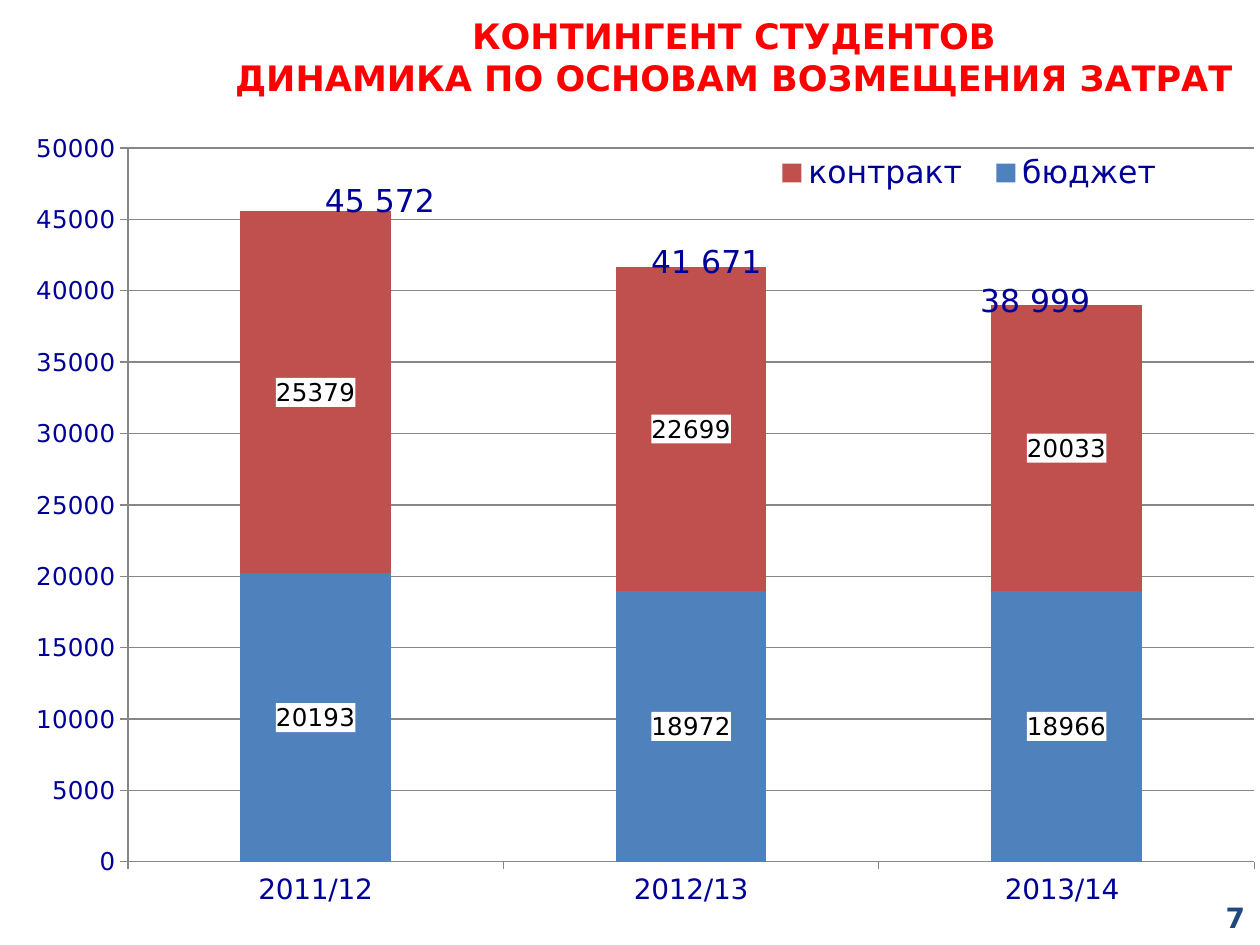
import pptx
import pptx.chart.data
import pptx.dml.color
import pptx.enum.chart
import pptx.enum.text
import pptx.oxml
import pptx.oxml.ns
import pptx.util

Inches, Pt = pptx.util.Inches, pptx.util.Pt
PP_ALIGN = pptx.enum.text.PP_ALIGN
ANCHOR = pptx.enum.text.MSO_ANCHOR
CHART = pptx.enum.chart

TITLE = "КОНТИНГЕНТ СТУДЕНТОВ\vДИНАМИКА ПО ОСНОВАМ ВОЗМЕЩЕНИЯ ЗАТРАТ"
PAGE = "7"
YEARS = ["2011/12", "2012/13", "2013/14 "]
SERIES = [
    ("бюджет", [20193, 18972, 18966], "4F81BD"),
    ("контракт", [25379, 22699, 20033], "C0504D"),
]
TOTALS = [
    ("45 572", 2.48, 1.39),
    ("41 671", 5.07, 1.87),
    ("38 999", 7.68, 2.18),
]
THEME = {
    "font": "DejaVu Sans",
    "title": (20, "FF0000", True),
    "page": (16, "1F497D", True),
    "total": (18, "000099", False),
    "legend": (18, "000099", False),
    "category": (16, "000099", False),
    "value": (14, "000099", False),
    "label": (14, "000000", False),
    "grid": "878787",
    "label_fill": "FFFFFF",
}
PLOT = (0.091, 0.029, 0.909, 0.888)
LEGEND = (0.6, 0.03, 0.34, 0.06)


def rgb(color):
    return pptx.dml.color.RGBColor.from_string(color)


def style(font, role):
    size, color, bold = THEME[role]
    font.name = THEME["font"]
    font.size = Pt(size)
    font.bold = bold
    font.color.rgb = rgb(color)


def write(sp, text, role, align, anchor):
    tf = sp.text_frame
    tf.word_wrap = True
    tf.auto_size = pptx.enum.text.MSO_AUTO_SIZE.NONE
    tf.vertical_anchor = anchor
    p = tf.paragraphs[0]
    p.text = text
    p.alignment = align
    style(p.font, role)


def add_text(slide, box, *args):
    write(slide.shapes.add_textbox(*map(Inches, box)), *args)


def layout_xml(box, inner=False):
    target = '<c:layoutTarget val="inner"/>' if inner else ""
    modes = "".join(f'<c:{k}Mode val="edge"/>' for k in "xy")
    sizes = "".join(f'<c:{k} val="{v}"/>' for k, v in zip("xywh", box))
    return pptx.oxml.parse_xml(
        f'<c:layout {pptx.oxml.ns.nsdecls("c")}><c:manualLayout>'
        f"{target}{modes}{sizes}</c:manualLayout></c:layout>"
    )


def set_layout(parent, box, inner=False):
    for old in parent.findall(pptx.oxml.ns.qn("c:layout")):
        parent.remove(old)
    position = parent.find(pptx.oxml.ns.qn("c:legendPos"))
    index = 0 if position is None else parent.index(position) + 1
    parent.insert(index, layout_xml(box, inner))


def add_labels(series):
    labels = series.data_labels
    labels.show_value = True
    labels.position = CHART.XL_LABEL_POSITION.CENTER
    style(labels.font, "label")
    fill = pptx.oxml.parse_xml(
        f'<c:spPr {pptx.oxml.ns.nsdecls("c", "a")}><a:solidFill>'
        f'<a:srgbClr val="{THEME["label_fill"]}"/></a:solidFill></c:spPr>'
    )
    labels._element.find(pptx.oxml.ns.qn("c:txPr")).addprevious(fill)


def add_chart(slide):
    data = pptx.chart.data.CategoryChartData()
    data.categories = YEARS
    for name, values, _ in SERIES:
        data.add_series(name, values)
    chart = slide.shapes.add_chart(
        CHART.XL_CHART_TYPE.COLUMN_STACKED,
        *map(Inches, (0.12, 0.99, 9.84, 6.38)), data
    ).chart
    chart.has_title = False
    style(chart.font, "label")
    plot = chart.plots[0]
    plot.gap_width, plot.overlap = 150, 100
    plot.vary_by_categories = False
    for series, (_, _, color) in zip(plot.series, SERIES):
        series.format.fill.solid()
        series.format.fill.fore_color.rgb = rgb(color)
        add_labels(series)

    axes = (chart.category_axis, "category"), (chart.value_axis, "value")
    for axis, role in axes:
        style(axis.tick_labels.font, role)
        axis.major_tick_mark = CHART.XL_TICK_MARK.OUTSIDE
        axis.format.line.color.rgb = rgb(THEME["grid"])
    value = chart.value_axis
    value.minimum_scale, value.maximum_scale, value.major_unit = 0, 50000, 5000
    value.has_major_gridlines = True
    value.major_gridlines.format.line.color.rgb = rgb(THEME["grid"])

    chart.has_legend = True
    legend = chart.legend
    legend.position = CHART.XL_LEGEND_POSITION.RIGHT
    legend.include_in_layout = True
    style(legend.font, "legend")
    set_layout(legend._element, LEGEND)
    set_layout(plot._element.getparent(), PLOT, inner=True)


def main():
    prs = pptx.Presentation()
    prs.slide_width, prs.slide_height = Inches(10), Inches(7.5)
    slide = prs.slides.add_slide(prs.slide_layouts[5])
    add_text(slide, (7.65, 7.08, 2.33, 0.4), PAGE, "page",
             PP_ALIGN.RIGHT, ANCHOR.MIDDLE)
    title = slide.shapes.title
    title.left, title.top, title.width, title.height = map(
        Inches, (1.69, 0.05, 8.27, 0.79))
    write(title, TITLE, "title", PP_ALIGN.CENTER, ANCHOR.MIDDLE)
    add_chart(slide)
    for text, left, top in TOTALS:
        add_text(slide, (left, top, 1.1, 0.4), text, "total",
                 PP_ALIGN.LEFT, ANCHOR.TOP)
    prs.save("out.pptx")


if __name__ == "__main__":
    main()
